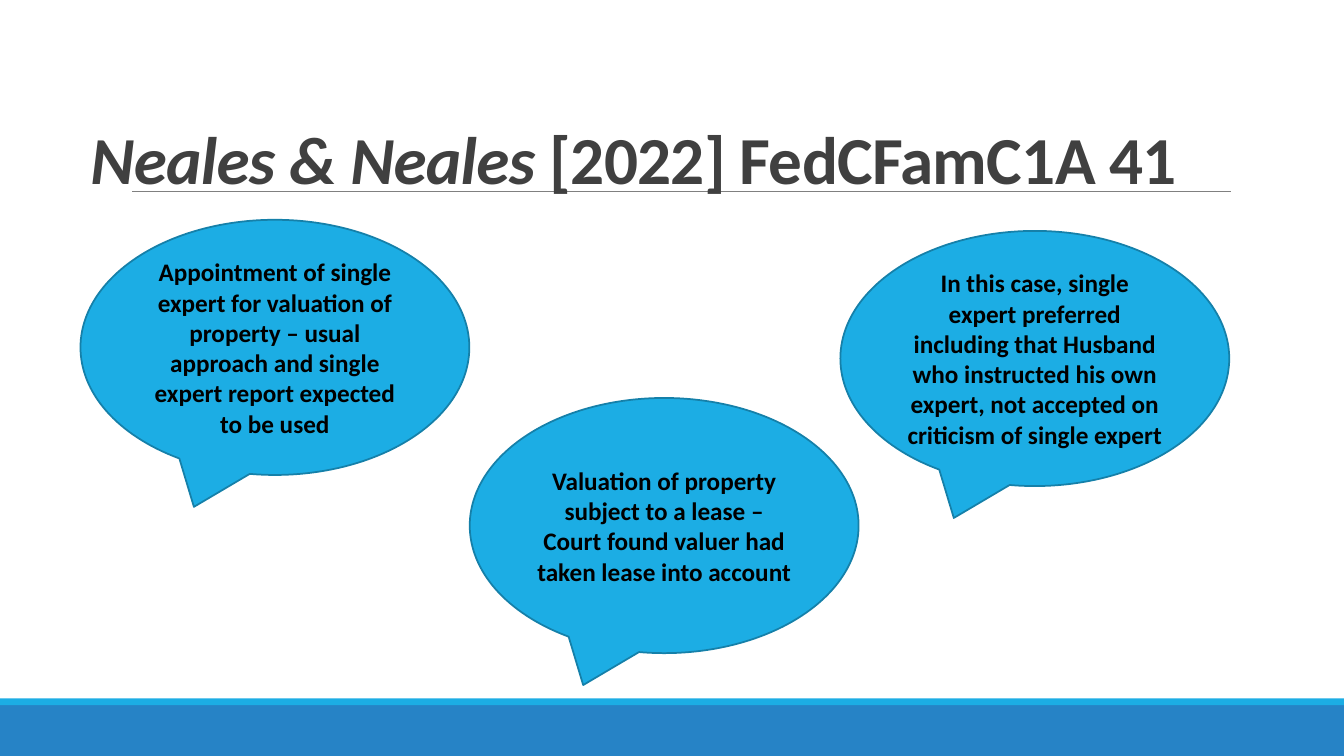
from lxml import etree
from pptx import Presentation
from pptx import util as u
from pptx.dml.color import RGBColor
from pptx.enum import shapes, text
from pptx.oxml.ns import qn

HUES = {"bar": "2683C6", "sky": "1CADE4", "edge": "1580A9",
        "rule": "808080", "title": "404040", "black": "000000"}
WIDE, HIGH = 33.87, 19.05
SIZE = (9.8, 6.43)
NOTES = [
    (2.03, 5.54, "Appointment of single expert for valuation of property – usual "
     "approach and single expert report expected to be used"),
    (21.18, 5.82, "In this case, single expert preferred including that Husband who "
     "instructed his own expert, not accepted on criticism of single expert"),
    (11.84, 10.03, "Valuation of property subject to a lease – Court found valuer had "
     "taken lease into account"),
]


def hue(name):
    return RGBColor.from_string(HUES[name])


def add_run(para, words, size, tone, slant=False):
    run = para.add_run()
    run.text = words
    font = run.font
    font.name, font.size = "Calibri", u.Pt(size)
    font.bold, font.italic = True, slant
    font.color.rgb = hue(tone)
    return run


def add_form(slide, kind, box, fill):
    form = slide.shapes.add_shape(kind, *map(u.Cm, box))
    form.shadow.inherit = False
    form.fill.solid()
    form.fill.fore_color.rgb = hue(fill)
    return form


def add_base(slide, box):
    left, top, width, height = box
    strip = 0.17
    for fill, part in (("bar", (left, top + strip, width, height - strip)),
                       ("sky", (left, top, width, strip))):
        add_form(slide, shapes.MSO_SHAPE.RECTANGLE, part, fill).line.fill.background()


def add_title(slide, box):
    left, top, width, height = box
    level = top + height - 0.28
    rule = slide.shapes.add_connector(
        shapes.MSO_CONNECTOR.STRAIGHT, u.Cm(left + 1.3), u.Cm(level),
        u.Cm(left + 28.98), u.Cm(level))
    rule.line.color.rgb = hue("rule")
    rule.line.width = u.Pt(0.5)
    etree.SubElement(rule._element.spPr, qn("a:effectLst"))

    frame = slide.shapes.add_textbox(*map(u.Cm, box)).text_frame
    frame.word_wrap = True
    frame.vertical_anchor = text.MSO_ANCHOR.BOTTOM
    para = frame.paragraphs[0]
    para.line_spacing = 0.85
    for words, slant in (("Neales & Neales ", True), ("[2022] FedCFamC1A 41", False)):
        run = add_run(para, words, 48, "title", slant)
        run.font._element.set("spc", "-50")


def add_note(slide, box, words):
    note = add_form(slide, shapes.MSO_SHAPE.OVAL_CALLOUT, box, "sky")
    note.line.color.rgb = hue("edge")
    note.line.width = u.Pt(1.25)
    frame = note.text_frame
    frame.word_wrap = True
    frame.vertical_anchor = text.MSO_ANCHOR.MIDDLE
    para = frame.paragraphs[0]
    para.alignment = text.PP_ALIGN.CENTER
    add_run(para, words, 18, "black")


def main():
    deck = Presentation()
    deck.slide_width, deck.slide_height = u.Cm(WIDE), u.Cm(HIGH)
    slide = deck.slides.add_slide(deck.slide_layouts[6])
    add_base(slide, (0, 17.6, WIDE, HIGH - 17.6))
    add_title(slide, (2.03, 1.07, WIDE - 2.03, 4.04))
    for left, top, words in NOTES:
        add_note(slide, (left, top, *SIZE), words)
    deck.save("out.pptx")


if __name__ == "__main__":
    main()
